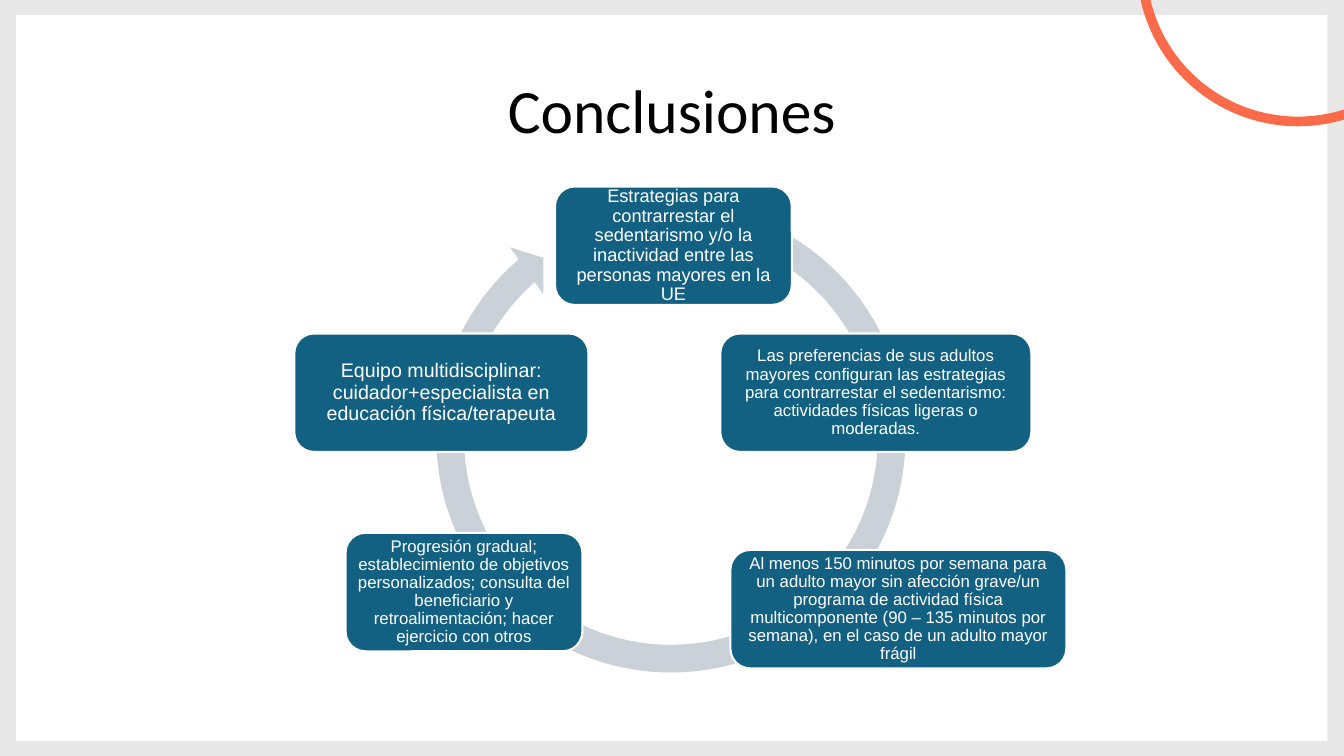
from dataclasses import dataclass

from pptx import Presentation
from pptx.dml.color import RGBColor
from pptx.enum.shapes import MSO_SHAPE
from pptx.enum.text import MSO_ANCHOR, PP_ALIGN
from pptx.util import Pt

RECTANGLE = MSO_SHAPE.RECTANGLE
ROUNDED = MSO_SHAPE.ROUNDED_RECTANGLE
DONUT = MSO_SHAPE.DONUT
CIRCULAR_ARROW = MSO_SHAPE.CIRCULAR_ARROW
MIDDLE = MSO_ANCHOR.MIDDLE
CENTER = PP_ALIGN.CENTER


@dataclass(frozen=True)
class Theme:
    backdrop: RGBColor = RGBColor.from_string("E8E8E8")
    white: RGBColor = RGBColor.from_string("FFFFFF")
    black: RGBColor = RGBColor.from_string("000000")
    coral: RGBColor = RGBColor.from_string("FB6B49")
    ring: RGBColor = RGBColor.from_string("CAD1D8")
    box: RGBColor = RGBColor.from_string("126082")
    title_font: str = "Calibri"
    body_font: str = "Arial"
    title_size: int = 44
    large: int = 14
    medium: int = 13
    small: int = 12


theme = Theme()


def write_text(shape, text, *, size, font, color, inset_x, inset_y):
    frame = shape.text_frame
    frame.word_wrap = True
    frame.vertical_anchor = MIDDLE
    frame.margin_left = frame.margin_right = Pt(inset_x)
    frame.margin_top = frame.margin_bottom = Pt(inset_y)
    paragraph = frame.paragraphs[0]
    paragraph.alignment = CENTER
    paragraph.line_spacing = 0.9
    run = paragraph.add_run()
    run.text = text
    run.font.name = font
    run.font.size = Pt(size)
    run.font.color.rgb = color


def paint(shape, fill, line=None):
    shape.shadow.inherit = False
    shape.fill.solid()
    shape.fill.fore_color.rgb = fill
    if line is None:
        shape.line.fill.background()
    else:
        shape.line.color.rgb = line
        shape.line.width = Pt(1.5)


presentation = Presentation()
presentation.slide_width = Pt(960)
presentation.slide_height = Pt(540)
slide = presentation.slides.add_slide(presentation.slide_layouts[6])

# Backdrop, white panel and corner ring
slide.background.fill.solid()
slide.background.fill.fore_color.rgb = theme.backdrop
panel = slide.shapes.add_shape(RECTANGLE, Pt(11.5), Pt(10.8), Pt(936.7), Pt(518.4))
paint(panel, theme.white)
corner_ring = slide.shapes.add_shape(DONUT, Pt(812), Pt(-140.2), Pt(230.4), Pt(230.4))
corner_ring.adjustments[0] = 0.03
paint(corner_ring, theme.coral)

# Title
title = slide.shapes.add_textbox(Pt(66), Pt(28.8), Pt(828), Pt(104.4))
write_text(title, "Conclusiones", size=theme.title_size, font=theme.title_font,
           color=theme.black, inset_x=7.2, inset_y=3.6)

# Circular arrow: thickness, head angle, end angle, start angle, head width
ANGLE_UNIT = 0.6  # adjustment units in one degree
cycle_arrow = slide.shapes.add_shape(CIRCULAR_ARROW, Pt(301), Pt(134.6), Pt(356.4), Pt(356.4))
arrow_settings = (0.0554, 5.5 * ANGLE_UNIT, 229.2 * ANGLE_UNIT, 290.25 * ANGLE_UNIT, 0.0576)
for index, setting in enumerate(arrow_settings):
    cycle_arrow.adjustments[index] = setting
paint(cycle_arrow, theme.ring)

# Conclusion boxes, clockwise from the top: left, top, width, type size, text
BOX_HEIGHT = 84.6
conclusions = [
    (396.4, 133.2, 169.2, theme.medium,
     "Estrategias para contrarrestar el sedentarismo y/o la inactividad entre las "
     "personas mayores en la UE"),
    (514.5, 238.2, 222.2, theme.small,
     "Las preferencias de sus adultos mayores configuran las estrategias para "
     "contrarrestar el sedentarismo: actividades físicas ligeras o moderadas."),
    (521.7, 392.8, 240, theme.small,
     "Al menos 150 minutos por semana para un adulto mayor sin afección grave/un "
     "programa de actividad física multicomponente (90 – 135 minutos por semana), "
     "en el caso de un adulto mayor frágil"),
    (246.8, 380.6, 169.2, theme.small,
     "Progresión gradual; establecimiento de objetivos personalizados; consulta del "
     "beneficiario y retroalimentación; hacer ejercicio con otros"),
    (210.2, 238.2, 210.2, theme.large,
     "Equipo multidisciplinar: cuidador+especialista en educación física/terapeuta"),
]
for left, top, width, size, text in conclusions:
    box = slide.shapes.add_shape(ROUNDED, Pt(left), Pt(top), Pt(width), Pt(BOX_HEIGHT))
    box.adjustments[0] = 0.167
    paint(box, theme.box, line=theme.white)
    inset = size * 0.3
    write_text(box, text, size=size, font=theme.body_font, color=theme.white,
               inset_x=inset, inset_y=inset)

presentation.save("out.pptx")
